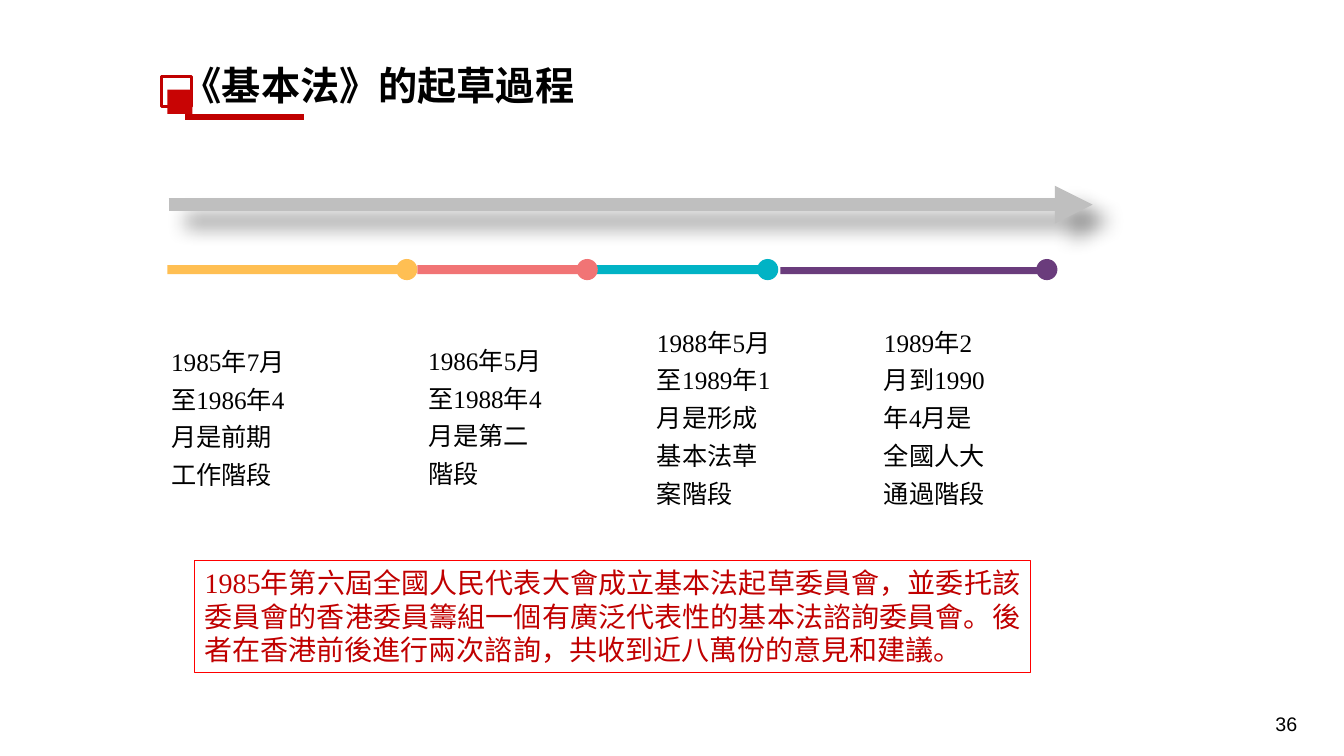
from lxml import etree
from pptx import Presentation
from pptx.dml.color import RGBColor
from pptx.enum.shapes import MSO_CONNECTOR, MSO_SHAPE
from pptx.enum.text import MSO_ANCHOR, MSO_AUTO_SIZE, PP_ALIGN
from pptx.oxml.ns import qn
from pptx.util import Pt

RECT, OVAL = MSO_SHAPE.RECTANGLE, MSO_SHAPE.OVAL
STRAIGHT = MSO_CONNECTOR.STRAIGHT
TOP, MIDDLE = MSO_ANCHOR.TOP, MSO_ANCHOR.MIDDLE
LEFT, CENTER, RIGHT, JUSTIFY = PP_ALIGN.LEFT, PP_ALIGN.CENTER, PP_ALIGN.RIGHT, PP_ALIGN.JUSTIFY
GROW, FIXED = MSO_AUTO_SIZE.SHAPE_TO_FIT_TEXT, MSO_AUTO_SIZE.NONE
CJK, SERIF, SANS = "Noto Sans CJK SC", "Times New Roman", "Arial"
DARK_RED = "C00000"
STAGES = [
    ("FFBF53", 0, 172.8, 6.5, 163.4, (-4.4, 48.9, 97.9, 116.6),
     "1985年7月至1986年4月", "是前期工作階段"),
    ("F17475", 178.6, 123.8, 6.5, 292.3, (179.2, 48.2, 101.5, 115.9),
     "1986年5月至1988年4月", "是第二階段"),
    ("01B3C5", 302.4, 123.8, 6.5, 421.2, (342.6, 35.2, 101.5, 143.3),
     "1988年5月至1989年1月", "是形成基本法草案階段"),
    ("6A3C7C", 437.8, 184.3, 5, 620.6, (504.7, 35.2, 94.3, 143.3),
     "1989年2月到1990年4月", "是全國人大通過階段"),
]


def color(hex_string):
    """Turn a hex string into a colour."""
    return RGBColor.from_string(hex_string)


def add_block(shapes, kind, box, fill=None, line=None, width=1):
    """Add a preset shape with an optional fill and outline."""
    block = shapes.add_shape(kind, *map(Pt, box))
    block.shadow.inherit = False
    if fill:
        block.fill.solid()
        block.fill.fore_color.rgb = color(fill)
    else:
        block.fill.background()
    if line:
        block.line.color.rgb = color(line)
        block.line.width = Pt(width)
    else:
        block.line.fill.background()
    return block


def add_rule(shapes, left, top, length, stroke, width):
    """Add a horizontal line and return it with its empty effect list."""
    rule = shapes.add_connector(STRAIGHT, Pt(left), Pt(top), Pt(left + length), Pt(top))
    rule.line.color.rgb = color(stroke)
    rule.line.width = Pt(width)
    effects = etree.SubElement(rule._element.spPr, qn("a:effectLst"))
    return rule, effects


def write_text(frame, parts, size, ink="000000", bold=False, align=LEFT,
               anchor=TOP, spacing=None, fit=GROW):
    """Fill a text frame with one paragraph of (text, font) parts."""
    frame.word_wrap = True
    frame.auto_size = fit
    frame.vertical_anchor = anchor
    paragraph = frame.paragraphs[0]
    paragraph.alignment = align
    paragraph.line_spacing = spacing
    for text, typeface in parts:
        run = paragraph.add_run()
        run.text = text
        run.font.size = Pt(size)
        run.font.bold = bold
        run.font.color.rgb = color(ink)
        run.font.name = typeface
        east_asian = etree.SubElement(run.font._element, qn("a:ea"))
        east_asian.set("typeface", CJK)


def add_text(shapes, box, parts, size, **style):
    """Add a text box."""
    write_text(shapes.add_textbox(*map(Pt, box)).text_frame, parts, size, **style)


def draw_title(shapes, left, top):
    """Draw the heading with its square marker and underline."""
    add_text(shapes, (left, top, 350, 41), [("《基本法》的起草過程 ", CJK)],
             28, bold=True, align=CENTER)
    add_block(shapes, RECT, (left + 16.6, top + 14.4, 21.6, 21.6), line=DARK_RED, width=2.25)
    add_block(shapes, RECT, (left + 20.9, top + 23.8, 18, 17.3), fill="C80404")
    add_rule(shapes, left + 33.9, top + 43.2, 85, DARK_RED, 4.5)


def draw_time_arrow(shapes, left, top, length):
    """Draw the grey time arrow with its soft shadow."""
    arrow, effects = add_rule(shapes, left, top, length, "BFBFBF", 9)
    etree.SubElement(arrow.line._get_or_add_ln(), qn("a:tailEnd"), type="triangle")
    shadow = etree.SubElement(effects, qn("a:outerShdw"), blurRad=str(Pt(14)),
                              dist=str(Pt(16)), dir=str(45 * 60000),
                              algn="tl", rotWithShape="0")
    tint = etree.SubElement(shadow, qn("a:srgbClr"), val="000000")
    etree.SubElement(tint, qn("a:alpha"), val="43000")


def draw_stages(shapes, left, bottom):
    """Draw the coloured stage bars, their end dots and their captions."""
    for fill, start, length, height, dot, caption, period, event in reversed(STAGES):
        marker = shapes.add_group_shape().shapes
        add_block(marker, RECT, (left + start, bottom - height, length, height), fill)
        add_block(marker, OVAL, (left + dot, bottom - 10.8, 15.1, 15.1), fill)
        across, down, width, depth = caption
        add_text(shapes, (left + across, bottom + down - 6.4, width, depth),
                 [(period, SERIF), (event, CJK)], 18, spacing=1.25)


def draw_summary(shapes, box):
    """Draw the framed summary paragraph."""
    frame = add_block(shapes, RECT, box, line="FF0000", width=0.75).text_frame
    write_text(frame, [
        ("1985年", SERIF),
        ("第六屆全國人民代表大會成立基本法起草委員會，並委托該委員會的香港委員籌組一個有廣泛代表性的"
         "基本法諮詢委員會。後者在香港前後進行兩次諮詢，共收到近八萬份的意見和建議。", CJK),
    ], 20, ink=DARK_RED, align=JUSTIFY)


def main():
    """Build and save the slide."""
    deck = Presentation()
    deck.slide_width, deck.slide_height = Pt(960), Pt(540)
    shapes = deck.slides.add_slide(deck.slide_layouts[6]).shapes
    draw_time_arrow(shapes, 120.5, 146.2, 660)
    draw_title(shapes, 98.6, 40.3)
    draw_stages(shapes, 119.6, 195.8)
    add_text(shapes, (717.8, 502.6, 216, 28.8), [("36", SANS)], 14,
             align=RIGHT, anchor=MIDDLE, fit=FIXED)
    draw_summary(shapes, (139, 400.3, 596.9, 79.9))
    deck.save("out.pptx")


if __name__ == "__main__":
    main()
